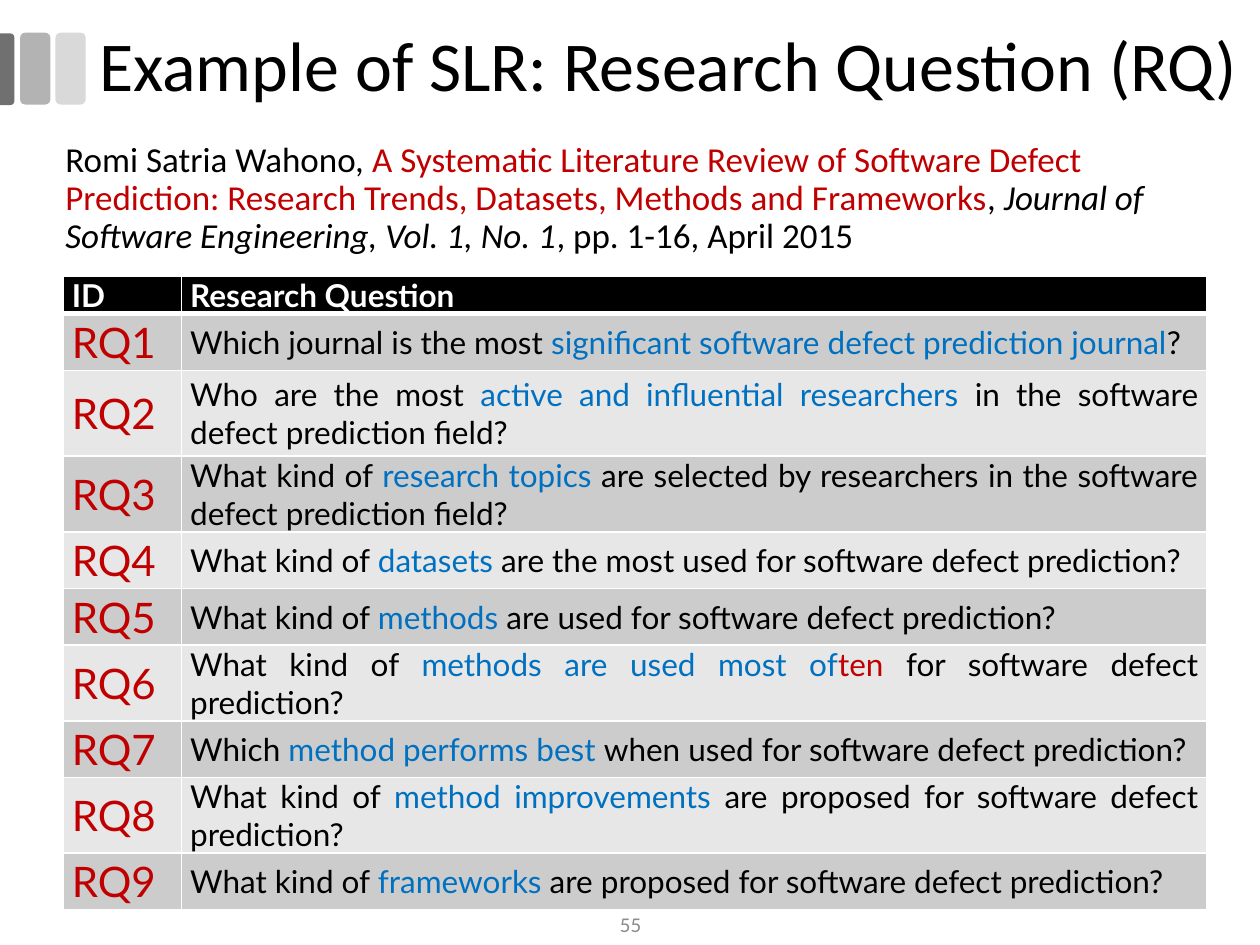
from lxml import etree
from pptx import Presentation
from pptx.dml.color import RGBColor
from pptx.enum.shapes import MSO_SHAPE as SHAPE
from pptx.enum.text import MSO_ANCHOR as ANCHOR, PP_ALIGN as ALIGN
from pptx.oxml.ns import qn
from pptx.util import Inches, Pt

BLACK, WHITE, RED, BLUE, GRAY = "000000", "FFFFFF", "C00000", "0070C0", "8C8C8C"
BANDS = ["CCCCCC", "E7E7E7"]

CITATION = [
    ("Romi Satria Wahono, ", BLACK),
    ("A Systematic Literature Review of Software Defect Prediction: "
     "Research Trends, Datasets, Methods and Frameworks", RED),
    (", ", BLACK),
    ("Journal of Software Engineering, Vol. 1, No. 1", BLACK, True),
    (", pp. 1-16, April 2015", BLACK),
]

# Row height and the coloured parts of each question
QUESTIONS = [
    (0.45, [("Which journal is the most ", BLACK),
            ("significant software defect prediction journal", BLUE), ("?", BLACK)]),
    (0.68, [("Who are the most ", BLACK), ("active and influential researchers ", BLUE),
            ("in the software defect prediction field?", BLACK)]),
    (0.54, [("What kind of ", BLACK), ("research topics ", BLUE),
            ("are selected by researchers in the software defect prediction field?", BLACK)]),
    (0.45, [("What kind of ", BLACK), ("datasets ", BLUE),
            ("are the most used for software defect prediction?", BLACK)]),
    (0.45, [("What kind of ", BLACK), ("methods ", BLUE),
            ("are used for software defect prediction?", BLACK)]),
    (0.45, [("What kind of ", BLACK), ("methods are used most of", BLUE), ("ten ", RED),
            ("for software defect prediction?", BLACK)]),
    (0.45, [("Which ", BLACK), ("method performs best ", BLUE),
            ("when used for software defect prediction?", BLACK)]),
    (0.54, [("What kind of ", BLACK), ("method improvements ", BLUE),
            ("are proposed for software defect prediction?", BLACK)]),
    (0.45, [("What kind of ", BLACK), ("frameworks ", BLUE),
            ("are proposed for software defect prediction?", BLACK)]),
]


def rgb(color):
    return RGBColor.from_string(color)


def add_runs(paragraph, parts, size, font, bold=False):
    for text, color, *italic in parts:
        run = paragraph.add_run()
        run.text = text
        run.font.size, run.font.name = Pt(size), font
        run.font.bold, run.font.italic = bold, bool(italic)
        run.font.color.rgb = rgb(color)


def add_text(slide, box, parts, size, anchor=ANCHOR.TOP, align=ALIGN.LEFT, spacing=1.0):
    frame = slide.shapes.add_textbox(*map(Inches, box)).text_frame
    frame.word_wrap = True
    frame.vertical_anchor = anchor
    paragraph = frame.paragraphs[0]
    paragraph.alignment, paragraph.line_spacing = align, spacing
    add_runs(paragraph, parts, size, "Calibri")


def add_bar(slide, kind, box, color):
    bar = slide.shapes.add_shape(kind, *map(Inches, box))
    bar.shadow.inherit = False
    bar.fill.solid()
    bar.fill.fore_color.rgb = rgb(color)
    bar.line.fill.background()
    return bar


def set_borders(cell, bottom):
    properties = cell._tc.get_or_add_tcPr()
    for index, (side, width) in enumerate(zip("LRTB", (1, 1, 1, bottom))):
        line = etree.Element(qn(f"a:ln{side}"), w=str(Pt(width)))
        fill = etree.SubElement(line, qn("a:solidFill"))
        etree.SubElement(fill, qn("a:srgbClr"), val=WHITE)
        properties.insert(index, line)


def fill_cell(cell, parts, size, color, header=False):
    cell.fill.solid()
    cell.fill.fore_color.rgb = rgb(color)
    cell.vertical_anchor = ANCHOR.MIDDLE
    cell.margin_left = cell.margin_right = Inches(0.07)
    cell.margin_top = cell.margin_bottom = 0
    paragraph = cell.text_frame.paragraphs[0]
    paragraph.alignment = ALIGN.JUSTIFY
    add_runs(paragraph, parts, size, "Lato", bold=header)
    set_borders(cell, bottom=3 if header else 1)


def add_question_table(slide):
    heights = [0.27] + [height for height, _ in QUESTIONS]
    table = slide.shapes.add_table(
        len(heights), 2, Inches(0.5), Inches(2.19), Inches(9.08), Inches(sum(heights))).table
    for column, width in zip(table.columns, (0.94, 8.14)):
        column.width = Inches(width)
    for row, height in zip(table.rows, heights):
        row.height = Inches(height)

    for column, heading in enumerate(("ID", "Research Question")):
        fill_cell(table.cell(0, column), [(heading, WHITE)], 18, BLACK, header=True)
    for number, (_, question) in enumerate(QUESTIONS, start=1):
        band = BANDS[(number - 1) % 2]
        fill_cell(table.cell(number, 0), [(f"RQ{number}", RED)], 24, band)
        fill_cell(table.cell(number, 1), question, 18, band)


def main():
    prs = Presentation()
    prs.slide_width, prs.slide_height = Inches(10), Inches(7.5)
    slide = prs.slides.add_slide(prs.slide_layouts[6])

    # Gray bars beside the title
    for left, color in ((0.44, "D9D9D9"), (0.16, "B3B3B3")):
        add_bar(slide, SHAPE.ROUNDED_RECTANGLE, (left, 0.26, 0.24, 0.57), color)
    edge_bar = add_bar(slide, SHAPE.ROUND_2_SAME_RECTANGLE, (-0.23, 0.49, 0.57, 0.12), "707070")
    edge_bar.adjustments[0] = 0.29
    edge_bar.rotation = 90

    # Title and citation
    add_text(slide, (0.69, 0.17, 9.3, 0.75),
             [("Example of SLR: Research Question (RQ)", BLACK)], 40,
             anchor=ANCHOR.MIDDLE, spacing=0.9)
    add_text(slide, (0.42, 1.08, 9.25, 0.92), CITATION, 20, spacing=0.9)

    add_question_table(slide)

    # Page number
    add_text(slide, (3.88, 7.17, 2.25, 0.33), [("55", GRAY)], 12,
             anchor=ANCHOR.MIDDLE, align=ALIGN.CENTER)
    prs.save("out.pptx")


if __name__ == "__main__":
    main()
